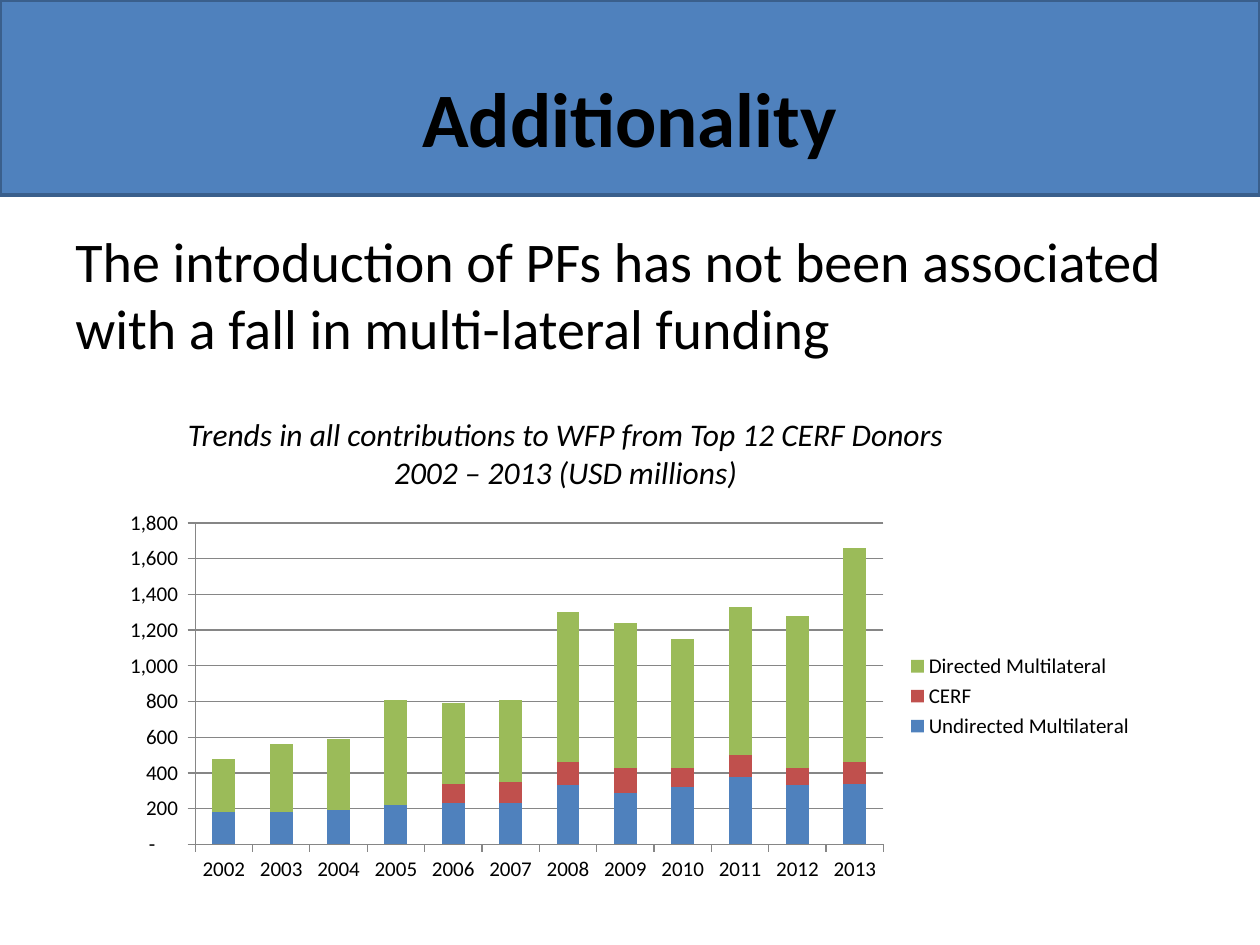
from pptx import Presentation
from pptx.chart.data import CategoryChartData
from pptx.dml.color import RGBColor
from pptx.enum.chart import XL_CHART_TYPE, XL_LEGEND_POSITION, XL_TICK_MARK
from pptx.enum.shapes import MSO_SHAPE
from pptx.enum.text import MSO_ANCHOR, PP_ALIGN
from pptx.util import Pt

FONT = "Calibri"
BLACK, BLUE, NAVY, GREY = "000000", "4F81BD", "3A5F8C", "868686"
NUMBER_FORMAT = '_-* #,##0_-;\\-* #,##0_-;_-* "-"??_-;_-@_'
YEARS = [str(year) for year in range(2002, 2014)]
SERIES = [
    ("Undirected Multilateral", BLUE,
     [180, 180, 190, 220, 230, 230, 330, 290, 320, 380, 330, 340]),
    ("CERF", "C0504D",
     [0, 0, 0, 0, 110, 120, 130, 140, 110, 120, 100, 120]),
    ("Directed Multilateral", "9BBB59",
     [300, 380, 400, 590, 450, 460, 840, 810, 720, 830, 850, 1200]),
]


def color(value):
    """Turn a hex string into a colour."""
    return RGBColor.from_string(value)


def style_font(font, size, bold=False, italic=False):
    """Apply the slide's typeface in black at the given size."""
    font.name = FONT
    font.size = Pt(size)
    font.bold = bold
    font.italic = italic
    font.color.rgb = color(BLACK)


def fill_text(box, text, size, align, anchor, **style):
    """Write one wrapped paragraph into a box."""
    frame = box.text_frame
    frame.word_wrap = True
    frame.vertical_anchor = anchor
    para = frame.paragraphs[0]
    para.text = text
    para.alignment = align
    style_font(para.font, size, **style)


def add_banner(page):
    """Draw the blue band across the top of the page."""
    banner = page.shapes.add_shape(MSO_SHAPE.RECTANGLE, 0, 0, Pt(720), Pt(111.6))
    banner.shadow.inherit = False
    banner.fill.solid()
    banner.fill.fore_color.rgb = color(BLUE)
    banner.line.color.rgb = color(NAVY)
    banner.line.width = Pt(2)


def add_title(page, text):
    """Place the title placeholder in front of the banner."""
    title = page.shapes.title
    title.left, title.top, title.width, title.height = Pt(36), Pt(21.6), Pt(648), Pt(90)
    fill_text(title, text, 44, PP_ALIGN.CENTER, MSO_ANCHOR.MIDDLE, bold=True)
    title.element.getparent().append(title.element)


def add_text(page, left, top, width, height, *content, **style):
    """Add a text box with one paragraph."""
    box = page.shapes.add_textbox(Pt(left), Pt(top), Pt(width), Pt(height))
    fill_text(box, *content, **style)


def style_axis(axis):
    """Give an axis a thin grey line and outward ticks."""
    axis.major_tick_mark = XL_TICK_MARK.OUTSIDE
    axis.minor_tick_mark = XL_TICK_MARK.NONE
    axis.format.line.color.rgb = color(GREY)
    axis.format.line.width = Pt(0.75)


def add_funding_chart(page):
    """Add the stacked columns of yearly contributions."""
    data = CategoryChartData(number_format=NUMBER_FORMAT)
    data.categories = YEARS
    for name, _, values in SERIES:
        data.add_series(name, values)
    chart = page.shapes.add_chart(XL_CHART_TYPE.COLUMN_STACKED, Pt(59.76), Pt(287.28),
                                  Pt(595.44), Pt(221.04), data).chart
    style_font(chart.font, 12)
    chart.has_title = False
    chart.has_legend = True
    chart.legend.position = XL_LEGEND_POSITION.RIGHT
    chart.legend.include_in_layout = False

    plot = chart.plots[0]
    plot.gap_width = 150
    plot.overlap = 100
    plot.vary_by_categories = False
    for series, (_, shade, _) in zip(plot.series, SERIES):
        series.format.fill.solid()
        series.format.fill.fore_color.rgb = color(shade)

    style_axis(chart.category_axis)
    axis = chart.value_axis
    style_axis(axis)
    axis.minimum_scale, axis.maximum_scale, axis.major_unit = 0, 1800, 200
    axis.tick_labels.number_format = NUMBER_FORMAT
    axis.tick_labels.number_format_is_linked = False
    axis.has_major_gridlines = True
    axis.major_gridlines.format.line.color.rgb = color(GREY)
    axis.major_gridlines.format.line.width = Pt(0.75)


def main():
    """Build the slide and save the deck."""
    deck = Presentation()
    deck.slide_width, deck.slide_height = Pt(720), Pt(540)
    page = deck.slides.add_slide(deck.slide_layouts[5])
    add_banner(page)
    add_title(page, "Additionality")
    add_text(page, 36, 126, 648, 90,
             "The introduction of PFs has not been associated with a fall in "
             "multi-lateral funding", 32, PP_ALIGN.LEFT, MSO_ANCHOR.TOP)
    add_funding_chart(page)
    add_text(page, 87.84, 213.84, 470.88, 90,
             "Trends in all contributions to WFP from Top 12 CERF Donors "
             "2002 – 2013 (USD millions)", 18, PP_ALIGN.CENTER, MSO_ANCHOR.MIDDLE,
             italic=True)
    deck.save("out.pptx")


if __name__ == "__main__":
    main()
